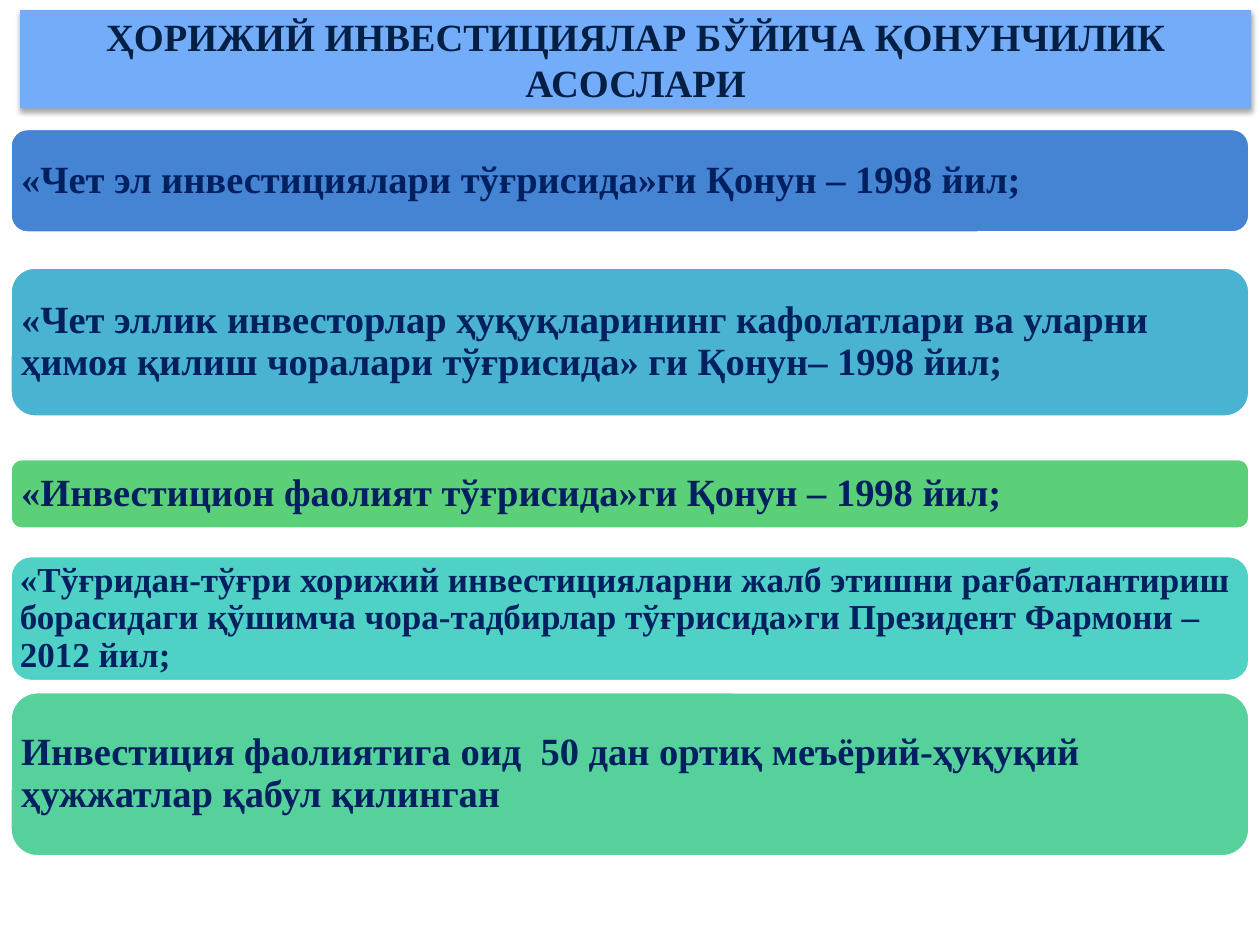
from dataclasses import dataclass

from lxml import etree
from pptx import Presentation
from pptx import util as u
from pptx.dml.color import RGBColor
from pptx.enum import shapes, text
from pptx.oxml import ns

SLIDE_WIDTH, SLIDE_HEIGHT = 10, 7.5
BAND_LEFT, BAND_WIDTH = 0.08, 9.84
CORNER_TEXT_SHARE = 0.05
FONT = "Times New Roman"

WHITE = RGBColor(0xFF, 0xFF, 0xFF)
TITLE_FILL = RGBColor(0x73, 0xAC, 0xF8)
TITLE_INK = RGBColor(0x04, 0x1F, 0x44)
BAND_INK = RGBColor(0x00, 0x20, 0x60)
BLUE = RGBColor(0x45, 0x84, 0xD3)
SKY = RGBColor(0x4B, 0xB3, 0xD2)
GREEN = RGBColor(0x5B, 0xD0, 0x78)
TURQUOISE = RGBColor(0x50, 0xD1, 0xC5)
MINT = RGBColor(0x56, 0xD1, 0x9C)


@dataclass
class Band:
    wording: str
    top: float
    height: float
    fill: RGBColor
    size: int = 22
    inset: float = 0.09


BANDS = [
    Band("«Чет эл инвестициялари тўғрисида»ги Қонун – 1998 йил;", 1.02, 0.83, BLUE),
    Band("«Чет эллик инвесторлар ҳуқуқларининг кафолатлари "
         "ва уларни ҳимоя қилиш чоралари тўғрисида» ги Қонун– 1998 йил;",
         2.12, 1.19, SKY),
    Band("«Инвестицион фаолият тўғрисида»ги Қонун – 1998 йил;", 3.64, 0.56, GREEN),
    Band("«Тўғридан-тўғри хорижий инвестицияларни жалб этишни рағбатлантириш "
         "борасидаги қўшимча чора-тадбирлар тўғрисида»ги Президент Фармони – 2012 йил;",
         4.41, 1, TURQUOISE, 20, 0.08),
    Band("Инвестиция фаолиятига оид  50 дан ортиқ меъёрий-ҳуқуқий "
         "ҳужжатлар қабул қилинган", 5.49, 1.31, MINT),
]


def write(shape, wording: str, size: int, ink: RGBColor, align):
    frame = shape.text_frame
    frame.text = wording
    frame.word_wrap = True
    frame.auto_size = text.MSO_AUTO_SIZE.NONE
    frame.vertical_anchor = text.MSO_ANCHOR.MIDDLE
    para = frame.paragraphs[0]
    para.alignment = align
    for span in para.runs:
        span.font.name = FONT
        span.font.size = u.Pt(size)
        span.font.bold = True
        span.font.color.rgb = ink
    return frame


def add_soft_shadow(shape) -> None:
    effects = etree.SubElement(shape._element.spPr, ns.qn("a:effectLst"))
    shadow = etree.SubElement(effects, ns.qn("a:outerShdw"), blurRad=str(u.Pt(3.1)),
                              dist=str(u.Pt(1.8)), dir="5400000", rotWithShape="0")
    color = etree.SubElement(shadow, ns.qn("a:srgbClr"), val="000000")
    etree.SubElement(color, ns.qn("a:alpha"), val="35000")


def draw_title(page) -> None:
    title = page.shapes.title
    title.left, title.top = u.Inches(0.16), u.Inches(0.08)
    title.width, title.height = u.Inches(9.77), u.Inches(0.78)
    title.fill.solid()
    title.fill.fore_color.rgb = TITLE_FILL
    add_soft_shadow(title)
    write(title, "ҲОРИЖИЙ ИНВЕСТИЦИЯЛАР БЎЙИЧА ҚОНУНЧИЛИК АСОСЛАРИ",
          22, TITLE_INK, text.PP_ALIGN.CENTER)


def draw_band(page, band: Band) -> None:
    box = page.shapes.add_shape(
        shapes.MSO_SHAPE.ROUNDED_RECTANGLE, u.Inches(BAND_LEFT), u.Inches(band.top),
        u.Inches(BAND_WIDTH), u.Inches(band.height))
    box.shadow.inherit = False
    box.fill.solid()
    box.fill.fore_color.rgb = band.fill
    box.line.color.rgb = WHITE
    box.line.width = u.Pt(2)
    frame = write(box, band.wording, band.size, BAND_INK, text.PP_ALIGN.LEFT)
    frame.paragraphs[0].line_spacing = 0.9
    margin = u.Inches(band.inset - CORNER_TEXT_SHARE * band.height)
    frame.margin_left = frame.margin_right = margin
    frame.margin_top = frame.margin_bottom = margin


def main() -> None:
    deck = Presentation()
    deck.slide_width, deck.slide_height = u.Inches(SLIDE_WIDTH), u.Inches(SLIDE_HEIGHT)
    page = deck.slides.add_slide(deck.slide_layouts.get_by_name("Title Only"))
    draw_title(page)
    for band in BANDS:
        draw_band(page, band)
    deck.save("out.pptx")


if __name__ == "__main__":
    main()
